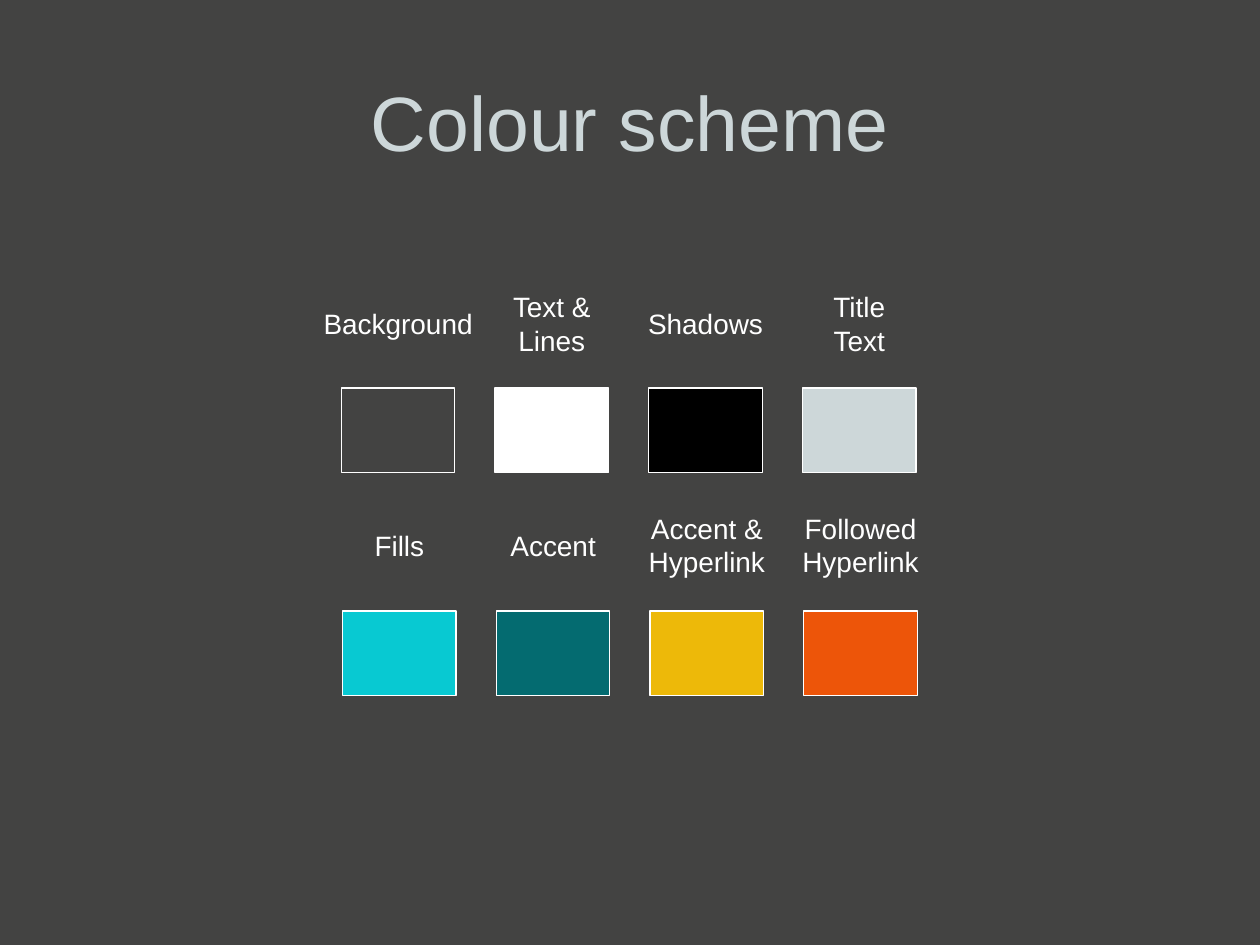
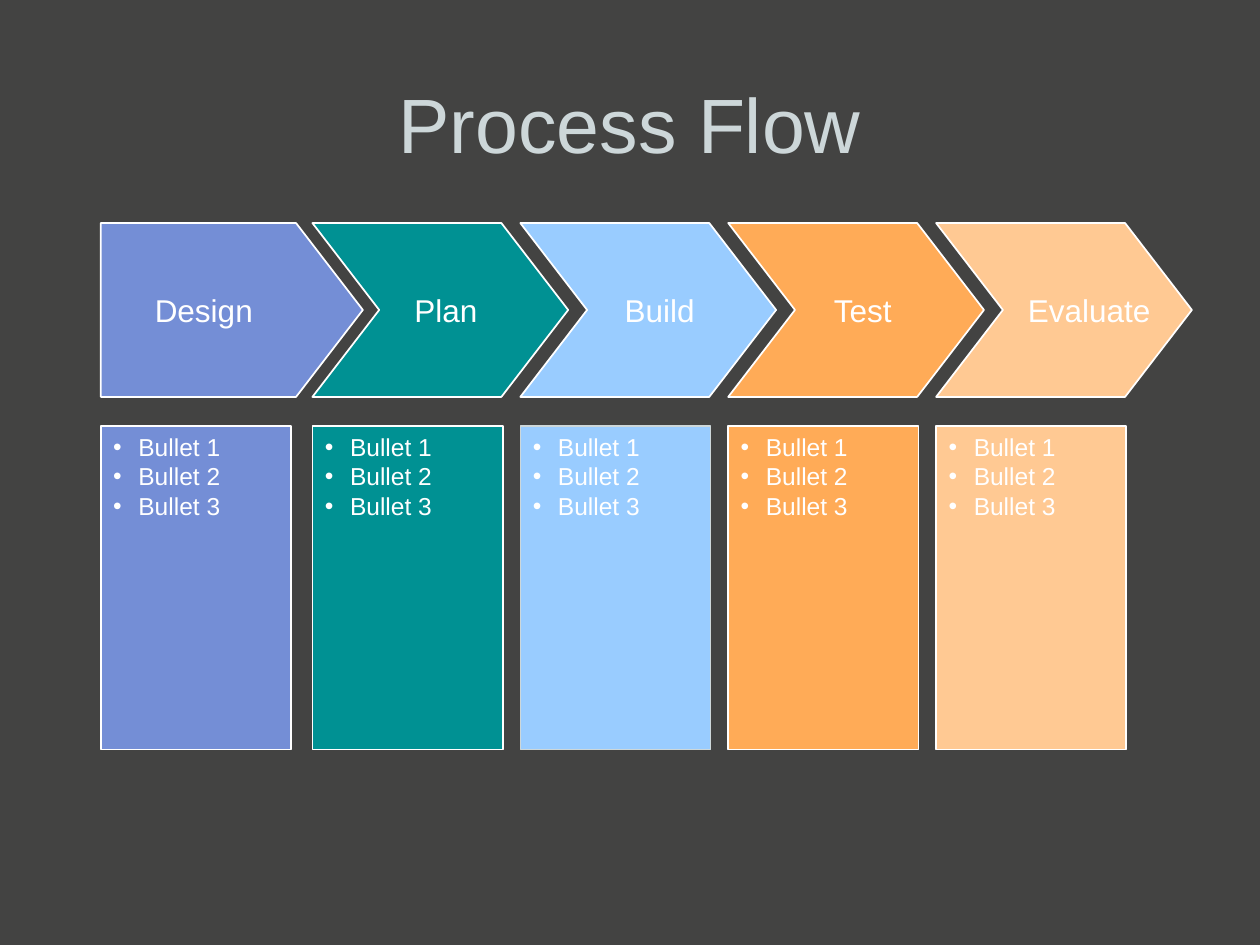
from pptx import Presentation
from pptx.dml.color import RGBColor
from pptx.enum import shapes, text
from pptx.oxml import xmlchemy as xml
from pptx.util import Inches, Pt

BACK = RGBColor(0x43, 0x43, 0x42)
WHITE = RGBColor(0xFF, 0xFF, 0xFF)
BLACK = RGBColor(0x00, 0x00, 0x00)
PALE = RGBColor(0xCD, 0xD7, 0xD9)
CYAN = RGBColor(0x08, 0xC9, 0xD2)
TEAL = RGBColor(0x04, 0x6B, 0x70)
GOLD = RGBColor(0xED, 0xB9, 0x09)
RED = RGBColor(0xED, 0x55, 0x09)
BLUE = RGBColor(0x74, 0x8E, 0xD6)
GREEN = RGBColor(0x00, 0x91, 0x93)
SKY = RGBColor(0x99, 0xCC, 0xFF)
AMBER = RGBColor(0xFF, 0xAB, 0x57)
PEACH = RGBColor(0xFF, 0xC9, 0x93)

FONT = "Arial"
LEFT, CENTER = text.PP_ALIGN.LEFT, text.PP_ALIGN.CENTER
TOP, MIDDLE = text.MSO_ANCHOR.TOP, text.MSO_ANCHOR.MIDDLE


def add_mark(para):
    """Give a paragraph a round bullet with a hanging indent."""
    props = para._p.get_or_add_pPr()
    props.set("marL", str(Inches(0.2)))
    props.set("indent", str(-Inches(0.2)))
    for tag, key, value in (("a:buFont", "typeface", FONT),
                            ("a:buChar", "char", "•")):
        mark = xml.OxmlElement(tag)
        mark.set(key, value)
        props.append(mark)


def write(frame, lines, size=16, color=WHITE, align=LEFT, anchor=TOP,
          bullet=False, wrap=True):
    """Fill a text frame, one paragraph for each line."""
    frame.word_wrap = wrap
    frame.vertical_anchor = anchor
    if not wrap:
        frame.auto_size = text.MSO_AUTO_SIZE.SHAPE_TO_FIT_TEXT
    for i, line in enumerate(lines):
        para = frame.add_paragraph() if i else frame.paragraphs[0]
        para.text = line
        para.alignment = align
        if bullet:
            add_mark(para)
        for font in [para.font] + [run.font for run in para.runs]:
            font.name, font.size = FONT, Pt(size)
            font.color.rgb = color


class Deck:
    """Holds the shared style and the current slide."""

    def __init__(self):
        self.prs = Presentation()
        self.prs.slide_width, self.prs.slide_height = Inches(10), Inches(7.5)
        self.slide = None

    def start(self, title, top):
        self.slide = self.prs.slides.add_slide(self.prs.slide_layouts[6])
        fill = self.slide.background.fill
        fill.solid()
        fill.fore_color.rgb = BACK
        self.label([title], 0.5, top, 9, 1.25, size=44, color=PALE,
                   align=CENTER, anchor=MIDDLE)

    def label(self, lines, x, y, w, h, **style):
        box = self.slide.shapes.add_textbox(
            Inches(x), Inches(y), Inches(w), Inches(h))
        write(box.text_frame, lines, **style)

    def paint(self, shape, fill, line, width):
        shape.shadow.inherit = False
        shape.fill.solid()
        shape.fill.fore_color.rgb = fill
        shape.line.color.rgb = line
        shape.line.width = Pt(width)

    def rect(self, x, y, w, h, fill, line=WHITE, width=1):
        shape = self.slide.shapes.add_shape(
            shapes.MSO_SHAPE.RECTANGLE,
            Inches(x), Inches(y), Inches(w), Inches(h))
        self.paint(shape, fill, line, width)
        return shape

    def arrow(self, x, y, w, h, fill, tip=0.53, notch=True):
        """Draw a block arrow, with a notched tail unless it is the first."""
        mid = y + h / 2
        points = [(x, y), (x + w - tip, y), (x + w, mid),
                  (x + w - tip, y + h), (x, y + h)]
        if notch:
            points.append((x + tip, mid))
        first, *rest = [(Inches(a), Inches(b)) for a, b in points]
        form = self.slide.shapes.build_freeform(*first)
        form.add_line_segments(rest, close=True)
        self.paint(form.convert_to_shape(), fill, WHITE, 1)


def draw_scheme(deck):
    deck.start("Colour scheme", 0.33)
    # Rows: left edge, swatch top, label centre, then (lines, width, colour)
    rows = [
        (2.71, 3.08, 2.57, [(["Background"], 1.4, BACK),
                            (["Text &", "Lines"], 0.86, WHITE),
                            (["Shadows"], 1.13, BLACK),
                            (["Title\vText"], 0.65, PALE)]),
        (2.72, 4.85, 4.33, [(["Fills"], 0.62, CYAN),
                            (["Accent"], 0.9, TEAL),
                            (["Accent &", "Hyperlink"], 1.15, GOLD),
                            (["Followed", "Hyperlink"], 1.15, RED)]),
    ]
    wide, step = 0.9, 1.22
    for left, top, mid, cells in rows:
        for i, (lines, w, color) in enumerate(cells):
            x = left + i * step
            deck.rect(x, top, wide, 0.67, color, width=0.75)
            count = len("\v".join(lines).split("\v"))
            h = 0.1 + 0.27 * count
            deck.label(lines, x + (wide - w) / 2, mid - h / 2, w, h,
                       align=CENTER, wrap=False)


def draw_flow(deck):
    deck.start("Process Flow", 0.35)
    # Steps: name, colour, panel outline, label left and width
    steps = [("Design", BLUE, WHITE, 1.13, 0.98),
             ("Plan", GREEN, WHITE, 3.19, 0.7),
             ("Build", SKY, PALE, 4.86, 0.76),
             ("Test", AMBER, WHITE, 6.52, 0.69),
             ("Evaluate", PEACH, WHITE, 8.06, 1.17)]
    lefts = [0.8] + [2.48 + 1.65 * i for i in range(4)]
    points = [f"Bullet {n}" for n in range(1, 4)]

    for i, (x, (name, fill, line, at, w)) in enumerate(zip(lefts, steps)):
        # Panel with bullets
        panel = deck.rect(x, 3.38, 1.51, 2.57, fill, line)
        write(panel.text_frame, points, size=14, bullet=True)
        # Arrow and its name
        deck.arrow(x, 1.77, 2.03 if i else 2.08, 1.38, fill, notch=i > 0)
        deck.label([name], at, 2.26, w, 0.4, size=18, wrap=False)


def main():
    deck = Deck()
    draw_scheme(deck)
    draw_flow(deck)
    deck.prs.save("out.pptx")


if __name__ == "__main__":
    main()
